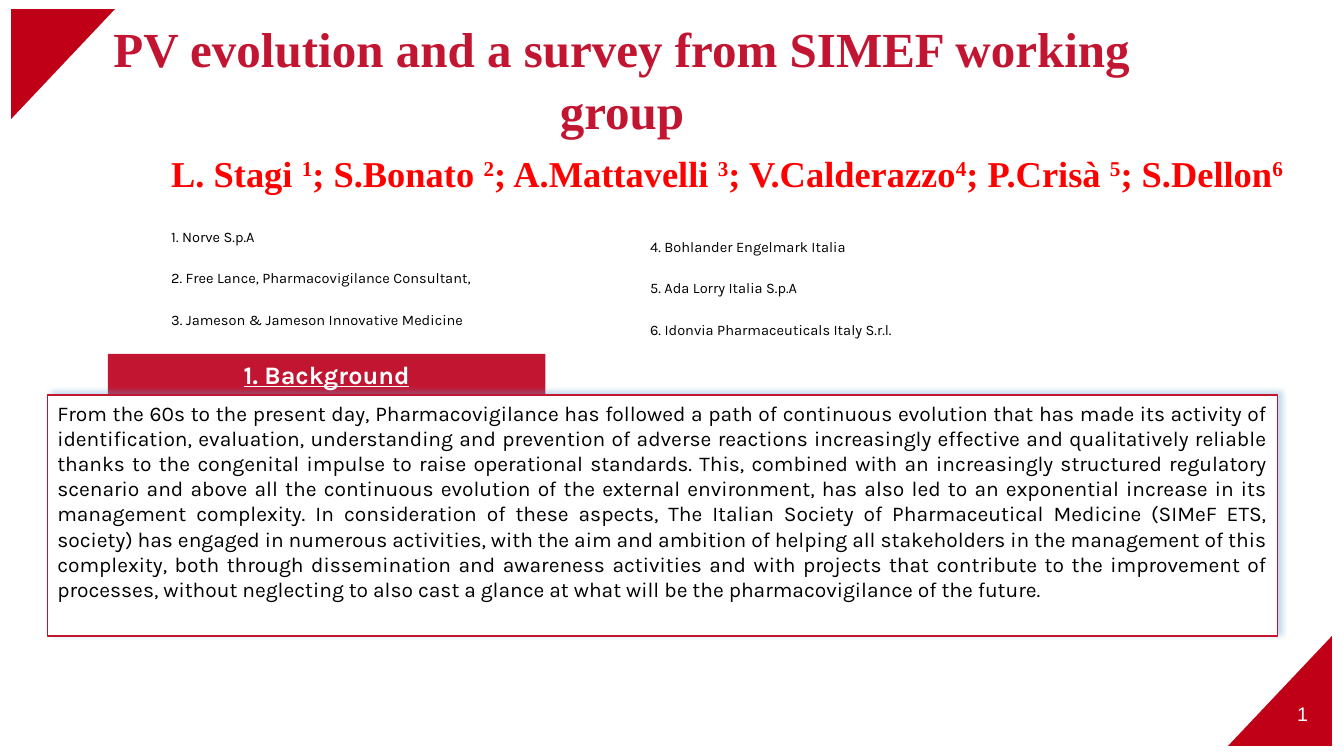
import pptx
import pptx.util
import pptx.dml.color
import pptx.enum.shapes
import pptx.enum.text
import pptx.oxml
import pptx.oxml.ns

PX = 9144  # EMU per px, 100 px to the inch
SHAPE = pptx.enum.shapes.MSO_SHAPE
ALIGN = pptx.enum.text.PP_ALIGN
ANCHOR = pptx.enum.text.MSO_ANCHOR
COLORS = {
    "corner": "C00017", "crimson": "C21532", "red": "FF0000",
    "white": "FFFFFF", "black": "000000", "glow": "63A0CC",
}
SERIF, SANS = "Times New Roman", "Karla"

AUTHORS = [("L. Stagi ", "1"), ("; S.Bonato ", "2"), ("; A.Mattavelli ", "3"),
           ("; V.Calderazzo", "4"), ("; P.Crisà ", "5"), ("; S.Dellon", "6")]
AFFILIATIONS_LEFT = ["1. Norve S.p.A",
                     "2. Free Lance, Pharmacovigilance Consultant,",
                     "3. Jameson & Jameson Innovative Medicine"]
AFFILIATIONS_RIGHT = ["4. Bohlander Engelmark Italia",
                      "5. Ada Lorry Italia S.p.A",
                      "6. Idonvia Pharmaceuticals Italy S.r.l."]
BACKGROUND = [
    "From the 60s to the present day, Pharmacovigilance has followed a path of "
    "continuous evolution that has made its activity of identification, evaluation, "
    "understanding and prevention of adverse reactions increasingly effective and "
    "qualitatively reliable thanks to the congenital impulse to raise operational "
    "standards.",
    "This, combined with an increasingly structured regulatory scenario and above "
    "all the continuous evolution of the external environment, has also led to an "
    "exponential increase in its management complexity.",
    "In consideration of these aspects, The Italian Society of Pharmaceutical "
    "Medicine (SIMeF ETS, society) has engaged in numerous activities, with the aim "
    "and ambition of helping all stakeholders in the management of this complexity, "
    "both through dissemination and awareness activities and with projects that "
    "contribute to the improvement of processes, without neglecting to also cast a "
    "glance at what will be the pharmacovigilance of the future.",
]


def rgb(name):
    return pptx.dml.color.RGBColor.from_string(COLORS[name])


def emu(box):
    return [v * PX for v in box]


def style(p, size, font, color, bold=False, align=ALIGN.LEFT):
    p.alignment = align
    f = p.font
    f.size, f.name, f.bold = pptx.util.Pt(size), font, bold
    f.color.rgb = rgb(color)


def add_shape(s, kind, box, fill, line=None):
    sp = s.shapes.add_shape(kind, *emu(box))
    sp.shadow.inherit = False
    sp.fill.solid()
    sp.fill.fore_color.rgb = rgb(fill)
    if line:
        sp.line.color.rgb = rgb(line)
        sp.line.width = pptx.util.Pt(1)
    else:
        sp.line.fill.background()
    return sp


def add_text(s, box):
    tf = s.shapes.add_textbox(*emu(box)).text_frame
    tf.word_wrap = True
    return tf


def raise_run(r):
    r._r.get_or_add_rPr().set("baseline", "30000")


def add_corner(s, box, rotation):
    add_shape(s, SHAPE.RIGHT_TRIANGLE, box, "corner").rotation = rotation


def add_line(s, box, text, size, font, color, bold, align, spacing=None):
    p = add_text(s, box).paragraphs[0]
    p.text = text
    if spacing:
        p.line_spacing = spacing
    style(p, size, font, color, bold, align)


def add_authors(s, box):
    p = add_text(s, box).paragraphs[0]
    for name, mark in AUTHORS:
        p.add_run().text = name
        r = p.add_run()
        r.text = mark
        raise_run(r)
    style(p, 26, SERIF, "red", True)


def add_affiliations(s, box, lines):
    tf = add_text(s, box)
    for i, line in enumerate(lines):
        p = tf.add_paragraph() if i else tf.paragraphs[0]
        r = p.add_run()
        r.text = line
        raise_run(r)
        p.space_after = pptx.util.Pt(8)
        style(p, 18, SANS, "black")


def add_glow(sp):
    effects = sp._element.spPr.find(pptx.oxml.ns.qn("a:effectLst"))
    effects.append(pptx.oxml.parse_xml(
        f'<a:outerShdw {pptx.oxml.ns.nsdecls("a")} blurRad="50800" dist="38100" '
        f'dir="18900000" algn="bl" rotWithShape="0"><a:srgbClr val="{COLORS["glow"]}">'
        '<a:alpha val="40000"/></a:srgbClr></a:outerShdw>'))


def add_section(s, box, heading, sentences):
    x, y, w, h = box
    tab_h = 41
    # Heading tab
    tab = add_shape(s, SHAPE.RECTANGLE, (x + 60, y, 434, tab_h), "crimson")
    tab.text_frame.vertical_anchor = ANCHOR.MIDDLE
    p = tab.text_frame.paragraphs[0]
    p.text = heading
    style(p, 18, SANS, "white", True, ALIGN.CENTER)
    p.font.underline = True
    # Framed body
    frame = add_shape(s, SHAPE.RECTANGLE, (x, y + tab_h, w, h - tab_h), "white", "crimson")
    add_glow(frame)
    tf = frame.text_frame
    tf.word_wrap = True
    tf.vertical_anchor = ANCHOR.TOP
    p = tf.paragraphs[0]
    p.text = " ".join(sentences)
    style(p, 15, SANS, "black", align=ALIGN.JUSTIFY)


def main():
    prs = pptx.Presentation()
    prs.slide_width, prs.slide_height = emu((1333, 750))
    s = prs.slides.add_slide(prs.slide_layouts[6])

    # Corners and page number
    add_corner(s, (8, 12, 109, 103), 90)
    add_corner(s, (1215, 634, 109, 103), 270)
    add_line(s, (1258, 691, 49, 44), "1", 14, "Arial", "white", False, ALIGN.RIGHT)

    # Title, authors and affiliations
    add_line(s, (66, 11, 1102, 127), "PV evolution and a survey from SIMEF working group",
             35, SERIF, "crimson", True, ALIGN.CENTER, 1.05)
    add_authors(s, (160, 145, 1130, 55))
    add_affiliations(s, (160, 218, 460, 123), AFFILIATIONS_LEFT)
    add_affiliations(s, (635, 228, 460, 123), AFFILIATIONS_RIGHT)

    # Background section
    add_section(s, (47, 351, 1220, 280), "1. Background", BACKGROUND)
    prs.save("out.pptx")


if __name__ == "__main__":
    main()
